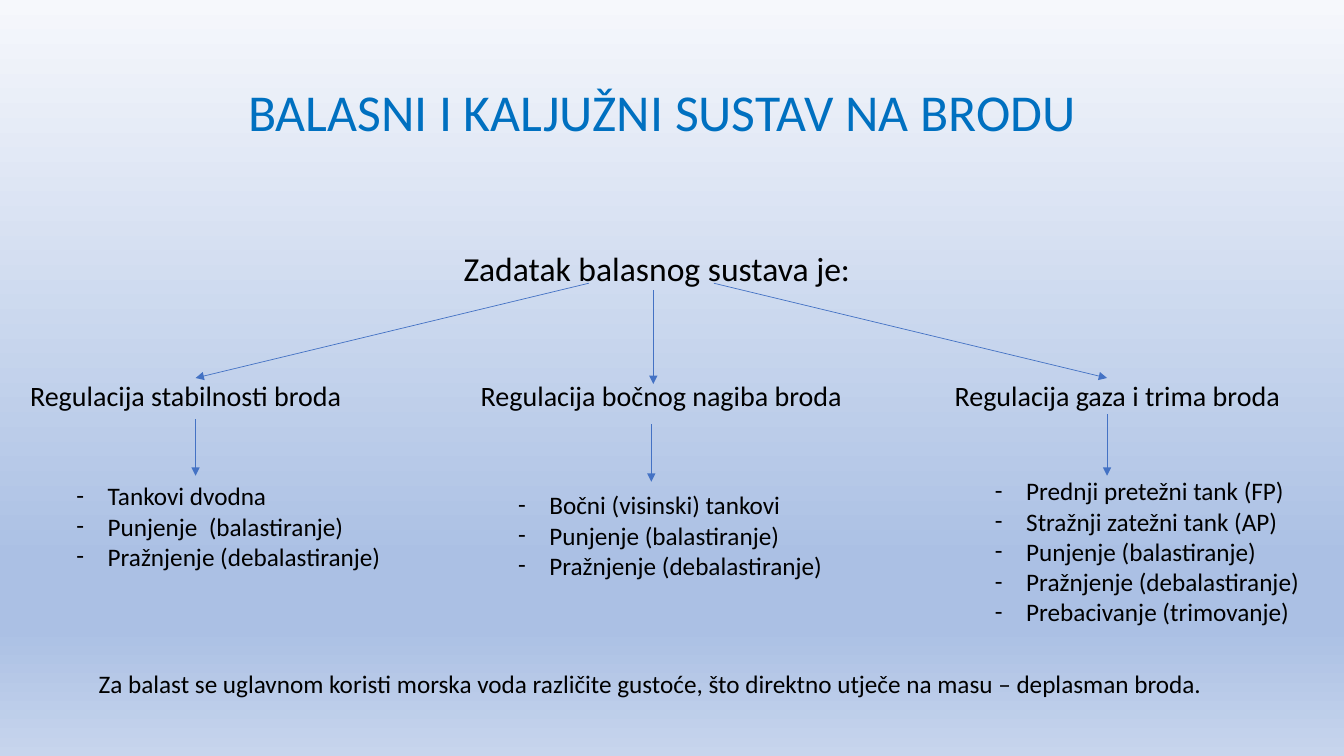
from lxml import etree
from pptx import Presentation
from pptx import util as u
from pptx.dml import color
from pptx.enum import shapes, text
from pptx.oxml import ns

TITLE_COLOR, TEXT_COLOR, ARROW_COLOR = "0070C0", "000000", "4472C4"


def rgb(value):
    return color.RGBColor.from_string(value)


def add_xml(parent, tag, **attributes):
    return etree.SubElement(parent, ns.qn(tag), attributes)


class SlideBuilder:
    """Holds the shared text style and the slide being built."""

    def __init__(self, slide, font="Calibri", size=18):
        self.slide, self.font, self.size = slide, font, size

    def background(self, stops):
        fill = self.slide.background.fill
        fill.gradient()
        fill.gradient_angle = 270
        stop_list = next(self.slide.element.iter(ns.qn("a:gsLst")))
        for stop in list(stop_list):
            stop_list.remove(stop)
        for percent, value in stops:
            stop = add_xml(stop_list, "a:gs", pos=str(percent * 1000))
            add_xml(stop, "a:srgbClr", val=value)

    def text_run(self, paragraph, words, size, value=TEXT_COLOR):
        paragraph.alignment = text.PP_ALIGN.LEFT
        run = paragraph.add_run()
        run.text = words
        run.font.name, run.font.size = self.font, u.Pt(size)
        run.font.color.rgb = rgb(value)

    def title(self, words, left, top, width, height, size):
        shape = self.slide.shapes.title
        shape.left, shape.top = u.Inches(left), u.Inches(top)
        shape.width, shape.height = u.Inches(width), u.Inches(height)
        frame = shape.text_frame
        frame.vertical_anchor = text.MSO_ANCHOR.TOP
        frame.margin_left = u.Inches(0.52)
        frame.auto_size = text.MSO_AUTO_SIZE.NONE
        paragraph = frame.paragraphs[0]
        paragraph.line_spacing, paragraph.space_before = 0.9, u.Pt(0)
        self.text_run(paragraph, words, size, TITLE_COLOR)

    def text_box(self, lines, left, top, width, height, size=None, wrap=True, bullet=None):
        box = self.slide.shapes.add_textbox(*map(u.Inches, (left, top, width, height)))
        frame = box.text_frame
        frame.word_wrap = wrap
        for number, line in enumerate(lines):
            paragraph = frame.add_paragraph() if number else frame.paragraphs[0]
            self.text_run(paragraph, line, size or self.size)
            if bullet:
                indent = u.Inches(0.31)
                properties = paragraph._p.get_or_add_pPr()
                properties.set("marL", str(indent))
                properties.set("indent", str(-indent))
                add_xml(properties, "a:buFont", typeface=self.font)
                add_xml(properties, "a:buChar", char=bullet)

    def arrow(self, start, end):
        connector = self.slide.shapes.add_connector(
            shapes.MSO_CONNECTOR.STRAIGHT, *map(u.Inches, start + end))
        connector.line.color.rgb = rgb(ARROW_COLOR)
        connector.line.width = u.Pt(0.5)
        properties = connector._element.spPr
        add_xml(properties.get_or_add_ln(), "a:tailEnd", type="triangle")
        add_xml(properties, "a:effectLst")


def main():
    presentation = Presentation()
    presentation.slide_width, presentation.slide_height = u.Inches(13.33), u.Inches(7.5)
    builder = SlideBuilder(presentation.slides.add_slide(presentation.slide_layouts[5]))
    builder.background([(0, "F6F8FC"), (74, "ABC0E4"), (83, "ABC0E4"), (100, "C7D5ED")])

    # Title and root of the tree
    builder.title("BALASNI I KALJUŽNI SUSTAV NA BRODU", 1.94, 0.81, 9.09, 0.83, size=37)
    builder.text_box(["Zadatak balasnog sustava je:"], 4.5, 2.41, 4.2, 0.5, size=24)

    # Branches: heading, its left and width; list, its left, top and height; two arrows
    filling, emptying = "Punjenje (balastiranje)", "Pražnjenje (debalastiranje)"
    branches = [
        ("Regulacija stabilnosti broda", 0.2, 3.5,
         ["Tankovi dvodna", "Punjenje  (balastiranje)", emptying], 0.66, 4.72, 1.31,
         [((5.84, 2.81), (1.94, 3.75)), ((1.94, 4.16), (1.94, 4.72))]),
        ("Regulacija bočnog nagiba broda", 4.67, 4.0,
         ["Bočni (visinski) tankovi", filling, emptying], 5.04, 4.81, 1.01,
         [((6.48, 2.88), (6.48, 3.81)), ((6.46, 4.21), (6.46, 4.78))]),
        ("Regulacija gaza i trima broda", 9.37, 3.7,
         ["Prednji pretežni tank (FP)", "Stražnji zatežni tank (AP)", filling, emptying,
          "Prebacivanje (trimovanje)"], 9.77, 4.67, 1.92,
         [((7.08, 2.81), (10.98, 3.75)), ((10.98, 4.11), (10.98, 4.72))]),
    ]
    for heading, left, width, items, list_left, list_top, list_height, arrows in branches:
        builder.text_box([heading], left, 3.71, width, 0.44, size=20)
        builder.text_box(items, list_left, list_top, 3.25, list_height, wrap=False, bullet="-")
        for start, end in arrows:
            builder.arrow(start, end)

    # Closing remark
    builder.text_box(["Za balast se uglavnom koristi morska voda različite gustoće, "
                      "što direktno utječe na masu – deplasman broda."],
                     0.88, 6.58, 11.21, 0.4, wrap=False)
    presentation.save("out.pptx")


if __name__ == "__main__":
    main()
